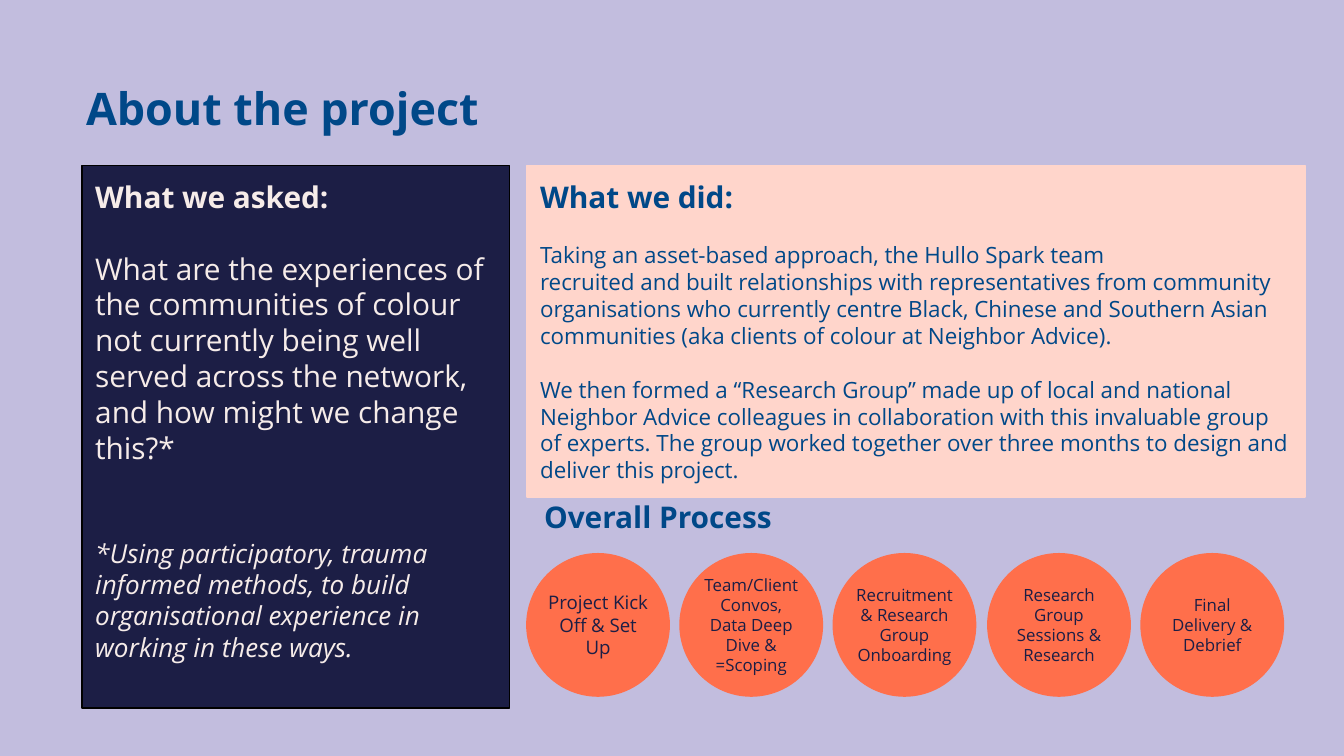
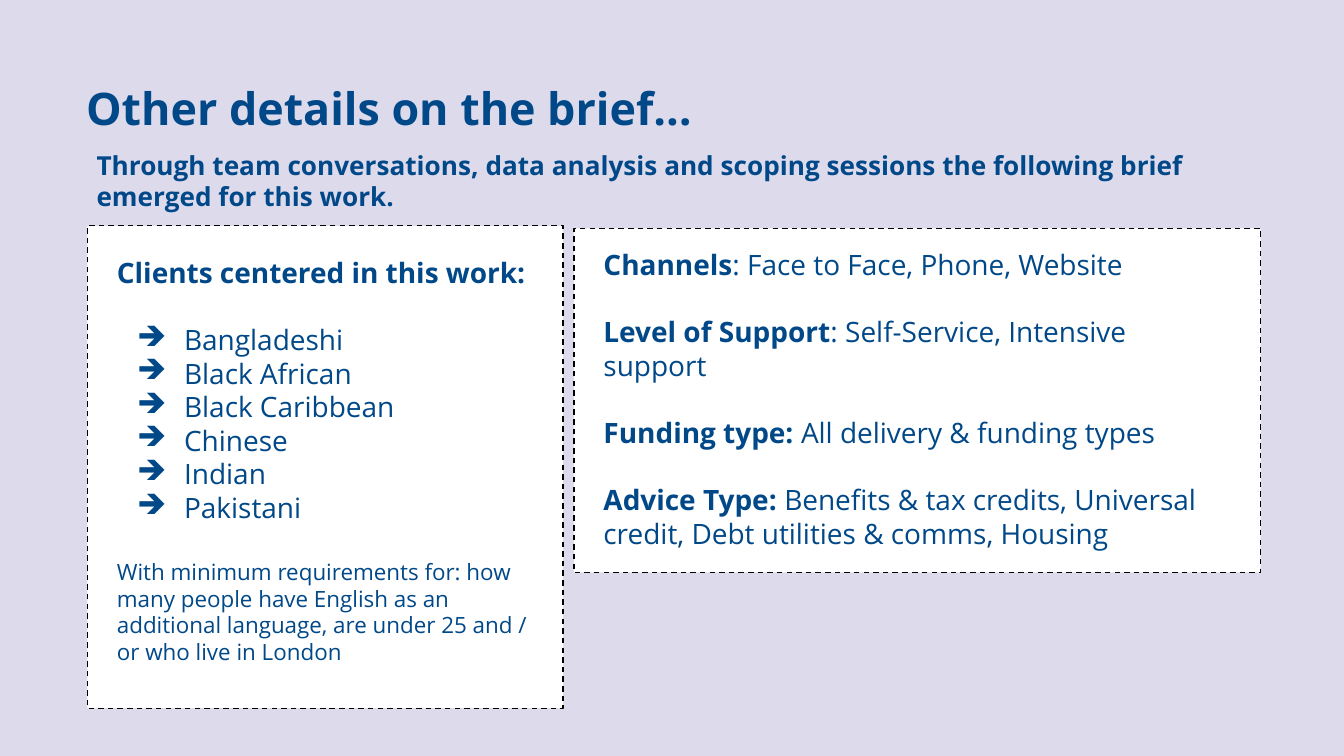
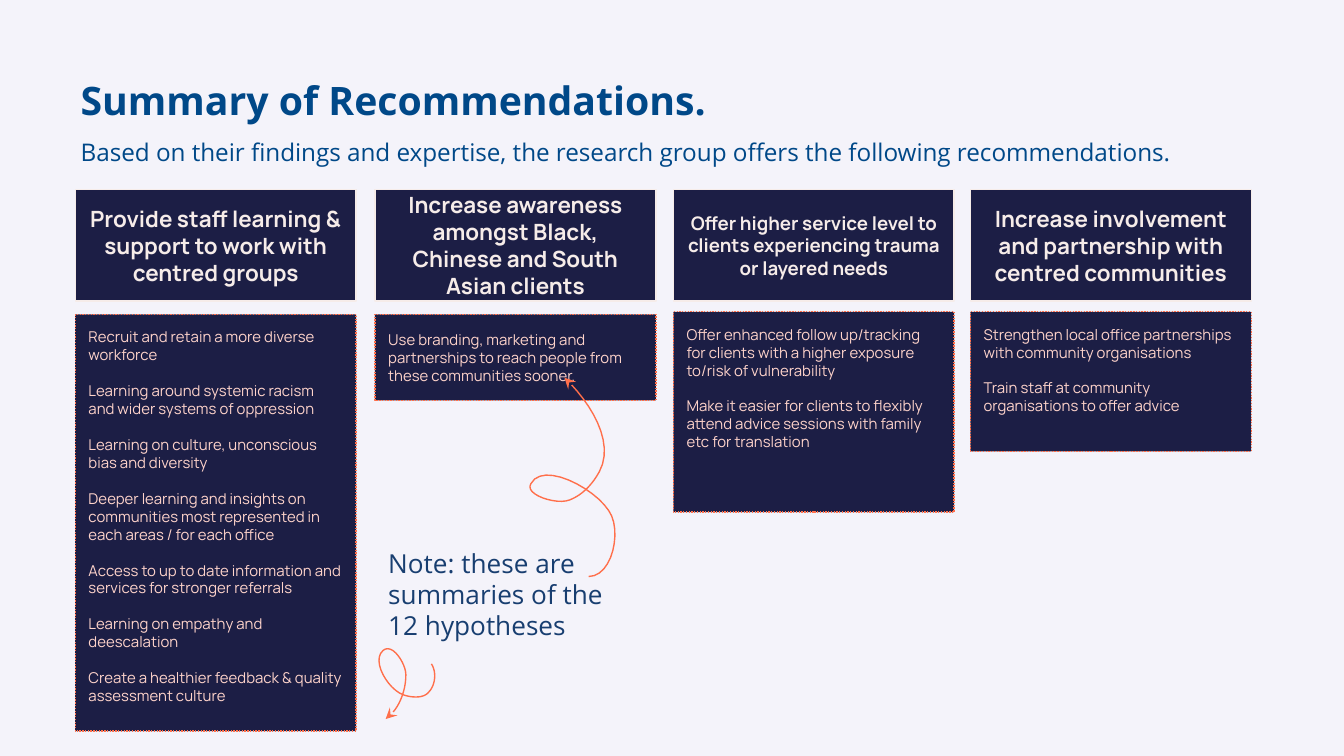
import dataclasses

import lxml.etree
import pptx
import pptx.dml.color
import pptx.enum.dml
import pptx.enum.shapes
import pptx.enum.text
import pptx.oxml.ns
import pptx.util

PX = 9144
ALIGN = pptx.enum.text.PP_ALIGN
ANCHOR = pptx.enum.text.MSO_ANCHOR
DASH = pptx.enum.dml.MSO_LINE
SHAPE = pptx.enum.shapes.MSO_SHAPE


@dataclasses.dataclass(frozen=True)
class Theme:
    """Colours, fonts and type sizes of the deck."""

    lilac: str = "C2BDDE"
    pale_lilac: str = "DDDAEC"
    mist: str = "F4F3FA"
    blue: str = "004888"
    note_blue: str = "183E70"
    navy: str = "1C1E45"
    peach: str = "FFD5CB"
    blush: str = "FFD4CB"
    cream: str = "F6ECE9"
    coral: str = "FF6F4B"
    white: str = "FFFFFF"
    black: str = "000000"
    sans: str = "Open Sans"
    display: str = "Manrope"
    title: int = 24
    summary_title: int = 21
    heading: int = 16
    brief: int = 15
    lead: int = 14
    subtitle: int = 13
    body: int = 12
    step: int = 10
    small_step: int = 9
    detail: int = 8
    leading: float = 1.2
    line: float = 0.75


THEME = Theme()


def rgb(color):
    return pptx.dml.color.RGBColor.from_string(color)


def add_child(parent, tag, **attributes):
    child = lxml.etree.SubElement(parent, pptx.oxml.ns.qn(tag))
    for name, value in attributes.items():
        child.set(name, str(value))
    return child


def write(box, text, size=THEME.body, color=THEME.blue, font=THEME.sans, bold=False,
          italic=False, align=ALIGN.LEFT, gap=0, lead="", bullet=""):
    """Add a paragraph, with a gap in points above and an optional bold lead."""
    frame = box.text_frame
    para = frame.paragraphs[0]
    if para.runs:
        para = frame.add_paragraph()
    para.alignment = align
    para.line_spacing = pptx.util.Pt(size * THEME.leading)
    para.space_before = pptx.util.Pt(gap * THEME.leading)
    para.space_after = pptx.util.Pt(0)
    if bullet:
        properties = para._p.get_or_add_pPr()
        properties.set("marL", str(50 * PX))
        properties.set("indent", str(-35 * PX))
        add_child(add_child(properties, "a:buClr"), "a:srgbClr", val=color)
        add_child(properties, "a:buChar", char=bullet)
    for words, strong in ((lead, True), (text, bold)):
        if words:
            span = para.add_run()
            span.text = words
            span.font.size = pptx.util.Pt(size)
            span.font.name = font
            span.font.bold = strong
            span.font.italic = italic
            span.font.color.rgb = rgb(color)


class Builder:
    """Holds the deck, its theme and the current page."""

    def __init__(self, theme):
        self.theme = theme
        self.deck = pptx.Presentation()
        self.deck.slide_width = 1000 * PX
        self.deck.slide_height = pptx.util.Inches(5.625)
        self.page = None

    def add_page(self, color):
        self.page = self.deck.slides.add_slide(self.deck.slide_layouts[5])
        fill = self.page.background.fill
        fill.solid()
        fill.fore_color.rgb = rgb(color)

    def prepare(self, box, insets=(10, 10, 10, 10), anchor=ANCHOR.TOP):
        frame = box.text_frame
        frame.word_wrap = True
        frame.auto_size = pptx.enum.text.MSO_AUTO_SIZE.NONE
        frame.vertical_anchor = anchor
        (frame.margin_left, frame.margin_top,
         frame.margin_right, frame.margin_bottom) = (inset * PX for inset in insets)
        return box

    def add_title(self, text, left, top, width, height, size=THEME.title):
        box = self.page.shapes.title
        box.left, box.top, box.width, box.height = (
            length * PX for length in (left, top, width, height))
        self.prepare(box)
        write(box, text, size=size, bold=True)
        return box

    def add_text(self, left, top, width, height):
        return self.prepare(self.page.shapes.add_textbox(
            left * PX, top * PX, width * PX, height * PX))

    def add_panel(self, left, top, width, height, fill, line, kind=SHAPE.RECTANGLE,
                  dash=None, **layout):
        box = self.page.shapes.add_shape(
            kind, left * PX, top * PX, width * PX, height * PX)
        box.shadow.inherit = False
        box.fill.solid()
        box.fill.fore_color.rgb = rgb(fill)
        self.draw_line(box, line)
        if dash:
            box.line.dash_style = dash
        return self.prepare(box, **layout)

    def draw_line(self, box, color):
        box.line.color.rgb = rgb(color)
        box.line.width = pptx.util.Pt(self.theme.line)

    def add_curl(self, start, curves, steps=12):
        """Draw cubic curves, each two handles and an end, up to an arrowhead."""
        points = []
        origin = start
        for curve in curves:
            knots = (origin, *curve)
            for step in range(1, steps + 1):
                t = step / steps
                weights = ((1 - t) ** 3, 3 * t * (1 - t) ** 2, 3 * t * t * (1 - t), t ** 3)
                points.append(tuple(
                    PX * sum(weight * knot[axis] for weight, knot in zip(weights, knots))
                    for axis in (0, 1)))
            origin = curve[-1]
        outline = self.page.shapes.build_freeform(start[0] * PX, start[1] * PX)
        outline.add_line_segments(points, close=False)
        curl = outline.convert_to_shape()
        curl.shadow.inherit = False
        curl.fill.background()
        self.draw_line(curl, self.theme.coral)
        add_child(curl.line._get_or_add_ln(), "a:tailEnd", type="stealth")


def build_project(builder):
    theme = builder.theme
    builder.add_page(theme.lilac)
    builder.add_title("About the project", 54, 50, 363, 61)

    did = builder.add_panel(392, 123, 579, 247, theme.peach, theme.peach)
    write(did, "What we did:", size=theme.heading, bold=True)
    write(did, "Taking an asset-based approach, the Hullo Spark team", gap=theme.body)
    write(did, "recruited and built relationships with representatives from community "
          "organisations who currently centre Black, Chinese and Southern Asian "
          "communities (aka clients of colour at Neighbor Advice).")
    write(did, "We then formed a “Research Group” made up of local and national "
          "Neighbor Advice colleagues in collaboration with this invaluable group of "
          "experts. The group worked together over three months to design and deliver "
          "this project.", gap=theme.body)

    asked = builder.add_panel(61, 123, 318, 404, theme.navy, theme.black)
    write(asked, "What we asked:", size=theme.heading, color=theme.cream, bold=True)
    write(asked, "What are the experiences of the communities of colour not currently "
          "being well served across the network, and how might we change this?*",
          size=theme.heading, color=theme.cream, gap=theme.heading)
    write(asked, "*Using participatory, trauma informed methods, to build organisational "
          "experience in working in these ways.", size=theme.lead, color=theme.cream,
          italic=True, gap=2 * theme.heading)

    steps = (
        ("Project Kick Off & Set Up", theme.step),
        ("Team/Client Convos, Data Deep Dive & =Scoping", theme.small_step),
        ("Recruitment & Research Group Onboarding", theme.small_step),
        ("Research Group Sessions & Research", theme.small_step),
        ("Final Delivery & Debrief", theme.small_step),
    )
    for index, (text, size) in enumerate(steps):
        circle = builder.add_panel(
            392 + round(index * 457 / 4), 412, 106, 106, theme.coral, theme.coral,
            kind=SHAPE.OVAL, insets=(0, 0, 0, 0), anchor=ANCHOR.MIDDLE)
        write(circle, text, size=size, color=theme.navy, align=ALIGN.CENTER)

    process = builder.add_text(395, 361, 328, 47)
    write(process, "Overall Process", size=theme.heading, bold=True)


def build_brief(builder):
    theme = builder.theme
    builder.add_page(theme.pale_lilac)
    builder.add_title("Other details on the brief…", 54, 50, 694, 61)

    clients = builder.add_panel(65, 168, 354, 359, theme.white, theme.black,
                                dash=DASH.DASH, insets=(22, 22, 22, 22))
    write(clients, "Clients centered in this work:", size=theme.brief, bold=True)
    groups = ("Bangladeshi", "Black African", "Black Caribbean",
              "Chinese", "Indian", "Pakistani")
    for index, group in enumerate(groups):
        write(clients, group, size=theme.brief, bullet="➔",
              gap=0 if index else theme.brief)
    write(clients, "With minimum requirements for: how many people have English as an "
          "additional language, are under 25 and / or who live in London",
          gap=theme.brief)

    details = builder.add_panel(427, 170, 511, 256, theme.white, theme.black,
                                dash=DASH.DASH, insets=(22, 14, 22, 22))
    facts = (
        ("Channels", ": Face to Face, Phone, Website"),
        ("Level of Support", ": Self-Service, Intensive support"),
        ("Funding type:", " All delivery & funding types"),
        ("Advice Type: ", "Benefits & tax credits, Universal credit, "
                          "Debt utilities & comms, Housing"),
    )
    for index, (lead, text) in enumerate(facts):
        write(details, text, lead=lead, size=theme.brief,
              gap=theme.brief if index else 0)

    intro = builder.add_text(62, 101, 877, 67)
    write(intro, "Through team conversations, data analysis and scoping sessions the "
          "following brief emerged for this work.", size=theme.lead, bold=True)


def build_summary(builder):
    theme = builder.theme
    builder.add_page(theme.mist)
    title = builder.add_title("Summary of Recommendations.", 50, 47, 916, 88,
                              size=theme.summary_title)
    write(title, "Based on their findings and expertise, the research group offers the "
          "following recommendations.", size=theme.subtitle, gap=6)

    columns = (
        (56, "Provide staff learning & support to work with centred groups",
         theme.body, 234, 310, ANCHOR.TOP,
         ("Recruit and retain a more diverse workforce",
          "Learning around systemic racism and wider systems of oppression",
          "Learning on culture, unconscious bias and diversity",
          "Deeper learning and insights on communities most represented in each areas "
          "/ for each office",
          "Access to up to date information and services for stronger referrals",
          "Learning on empathy and deescalation",
          "Create a healthier feedback & quality assessment culture")),
        (279, "Increase awareness amongst Black, Chinese and South Asian clients",
         theme.body, 234, 64, ANCHOR.MIDDLE,
         ("Use branding, marketing and partnerships to reach people from these "
          "communities sooner.",)),
        (501, "Offer higher service level to clients experiencing trauma or layered needs",
         theme.step, 232, 149, ANCHOR.TOP,
         ("Offer enhanced follow up/tracking for clients with a higher exposure "
          "to/risk of vulnerability",
          "Make it easier for clients to flexibly attend advice sessions with family "
          "etc for translation")),
        (722, "Increase involvement and partnership with centred communities",
         theme.body, 232, 104, ANCHOR.TOP,
         ("Strengthen local office partnerships with community organisations",
          "Train staff at community organisations to offer advice")),
    )
    for left, heading, size, top, height, anchor, actions in columns:
        header = builder.add_panel(left, 141, 209, 83, theme.navy, theme.cream,
                                   anchor=ANCHOR.MIDDLE)
        write(header, heading, size=size, color=theme.cream, font=theme.display,
              bold=True, align=ALIGN.CENTER)
        panel = builder.add_panel(left, top, 209, height, theme.navy, theme.coral,
                                  dash=DASH.ROUND_DOT, anchor=anchor)
        for index, action in enumerate(actions):
            write(panel, action, size=theme.detail, color=theme.blush,
                  font=theme.display, gap=theme.detail if index else 0)

    note = builder.add_text(279, 397, 195, 91)
    write(note, "Note: these are summaries of the 12 hypotheses", size=theme.lead,
          color=theme.note_blue)
    builder.add_curl((438, 429), (
        ((456, 429), (463, 394), (453, 380)),
        ((442, 363), (404, 343), (395, 360)),
        ((390, 368), (414, 376), (424, 372)),
        ((434, 368), (441, 360), (446, 351)),
        ((458, 329), (439, 299), (420, 281)),
    ))
    builder.add_curl((321, 494), (
        ((325, 500), (324, 510), (319, 515)),
        ((315, 520), (306, 519), (300, 517)),
        ((289, 513), (276, 492), (285, 484)),
        ((292, 478), (302, 494), (302, 502)),
        ((302, 514), (297, 528), (287, 535)),
    ))


def main():
    builder = Builder(THEME)
    build_project(builder)
    build_brief(builder)
    build_summary(builder)
    builder.deck.save("out.pptx")


if __name__ == "__main__":
    main()
